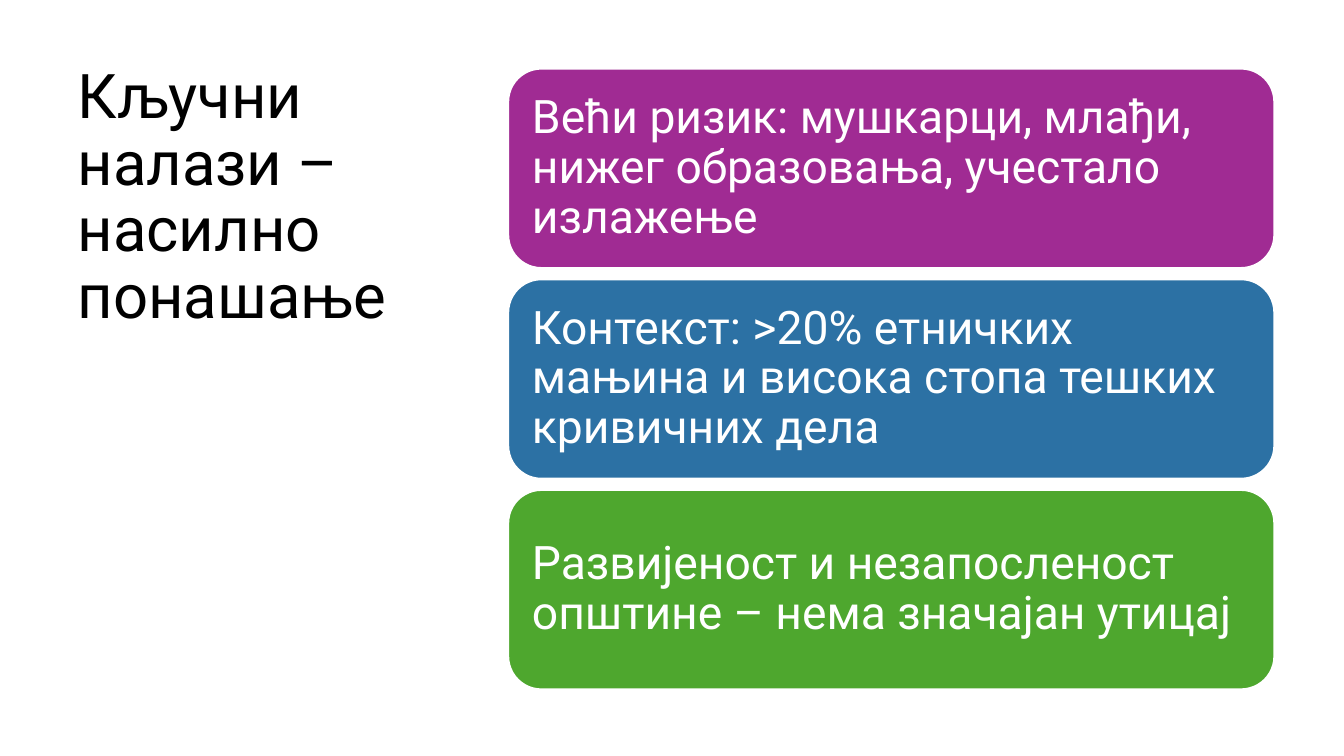
from dataclasses import dataclass

from pptx import Presentation
from pptx.dml.color import RGBColor
from pptx.enum.shapes import MSO_SHAPE
from pptx.enum.text import MSO_ANCHOR, MSO_AUTO_SIZE, PP_ALIGN
from pptx.slide import Slide
from pptx.text.text import TextFrame
from pptx.util import Inches, Pt

BLACK = RGBColor(0x00, 0x00, 0x00)
WHITE = RGBColor(0xFF, 0xFF, 0xFF)
PURPLE = RGBColor(0xA0, 0x2B, 0x93)
BLUE = RGBColor(0x2C, 0x71, 0xA4)
GREEN = RGBColor(0x4E, 0xA7, 0x2E)

FONT = "Roboto"
LEFT, TOP, WIDTH, HEIGHT = 5.04, 0.68, 7.6, 1.98
STEP = 2.09
INSET = Inches(0.14)


@dataclass
class Card:
    text: str
    fill: RGBColor


CARDS = [
    Card("Већи ризик: мушкарци, млађи, нижег образовања, учестало излажење", PURPLE),
    Card("Контекст: >20% етничких мањина и висока стопа тешких кривичних дела", BLUE),
    Card("Развијеност и незапосленост општине – нема значајан утицај", GREEN),
]


def set_text(frame: TextFrame, text: str, size: int, color: RGBColor,
             anchor: MSO_ANCHOR) -> None:
    frame.text = text
    frame.word_wrap = True
    frame.auto_size = MSO_AUTO_SIZE.NONE
    frame.vertical_anchor = anchor
    para = frame.paragraphs[0]
    para.alignment = PP_ALIGN.LEFT
    para.line_spacing = 0.9
    font = para.runs[0].font
    font.name = FONT
    font.size = Pt(size)
    font.color.rgb = color


def add_title(slide: Slide, text: str) -> None:
    title = slide.shapes.title
    title.left, title.top = Inches(0.67), Inches(0.6)
    title.width, title.height = Inches(3.82), Inches(6.33)
    set_text(title.text_frame, text, 44, BLACK, MSO_ANCHOR.TOP)


def add_card(slide: Slide, card: Card, top: float) -> None:
    shape = slide.shapes.add_shape(
        MSO_SHAPE.ROUNDED_RECTANGLE,
        Inches(LEFT), Inches(top), Inches(WIDTH), Inches(HEIGHT))
    shape.shadow.inherit = False
    shape.fill.solid()
    shape.fill.fore_color.rgb = card.fill
    shape.line.color.rgb = WHITE
    shape.line.width = Pt(1.5)
    frame = shape.text_frame
    frame.margin_left = frame.margin_right = INSET
    frame.margin_top = frame.margin_bottom = INSET
    set_text(frame, card.text, 33, WHITE, MSO_ANCHOR.MIDDLE)


def main() -> None:
    deck = Presentation()
    deck.slide_width, deck.slide_height = Inches(13.33), Inches(7.5)
    slide = deck.slides.add_slide(deck.slide_layouts.get_by_name("Title Only"))
    add_title(slide, "Кључни налази – насилно понашање")
    for row, card in enumerate(CARDS):
        add_card(slide, card, TOP + row * STEP)
    deck.save("out.pptx")


if __name__ == "__main__":
    main()
